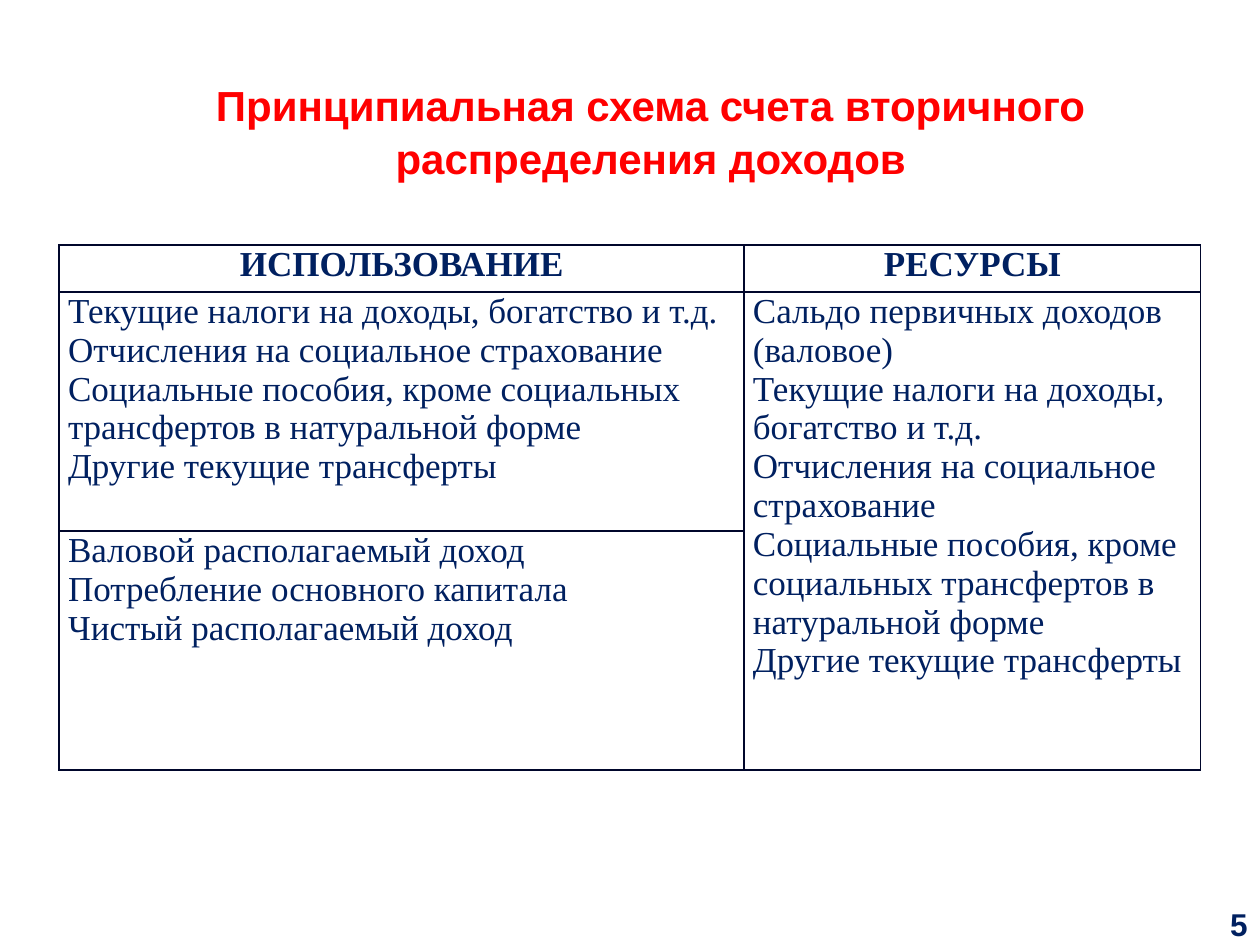
from dataclasses import dataclass

from lxml import etree
from pptx import Presentation
from pptx import util as u
from pptx.dml.color import RGBColor
from pptx.enum import text
from pptx.oxml.ns import qn

ALIGN = text.PP_ALIGN
ANCHOR = text.MSO_ANCHOR


@dataclass(frozen=True)
class Theme:
    navy: str = "002060"
    red: str = "FF0000"
    border: str = "00062B"
    white: str = "FFFFFF"
    sans: str = "Arial"
    serif: str = "Times New Roman"
    title_size: int = 24
    table_size: int = 20
    number_size: int = 18


def write(tf, content, font, size, color, bold=False, align=ALIGN.LEFT, spacing=1.0):
    """Fill a text frame with one paragraph; newlines become line breaks."""
    p = tf.paragraphs[0]
    p.alignment, p.line_spacing = align, spacing
    for i, line in enumerate(content.split("\n")):
        if i:
            p.add_line_break()
        r = p.add_run()
        r.text = line
        r.font.name, r.font.size, r.font.bold = font, u.Pt(size), bold
        r.font.color.rgb = RGBColor.from_string(color)


class Deck:
    def __init__(self, theme, width=10, height=7.5):
        self.theme = theme
        self.prs = Presentation()
        self.prs.slide_width, self.prs.slide_height = u.Inches(width), u.Inches(height)
        self.s = None

    def add_slide(self):
        self.s = self.prs.slides.add_slide(self.prs.slide_layouts[5])
        fill = self.s.background.fill
        fill.solid()
        fill.fore_color.rgb = RGBColor.from_string(self.theme.white)

    def box(self, x, y, w, h):
        """Turn shares of the slide's size into lengths."""
        W, H = self.prs.slide_width, self.prs.slide_height
        return int(x * W), int(y * H), int(w * W), int(h * H)

    def title(self, content, area):
        t, sp = self.theme, self.s.shapes.title
        sp.left, sp.top, sp.width, sp.height = self.box(*area)
        tf = sp.text_frame
        tf.word_wrap, tf.auto_size = True, text.MSO_AUTO_SIZE.NONE
        tf.vertical_anchor = ANCHOR.MIDDLE
        write(tf, content, t.sans, t.title_size, t.red, bold=True,
              align=ALIGN.CENTER, spacing=1.05)

    def page_number(self, number, area):
        t = self.theme
        tf = self.s.shapes.add_textbox(*self.box(*area)).text_frame
        tf.word_wrap, tf.vertical_anchor = True, ANCHOR.BOTTOM
        tf.margin_left = tf.margin_right = u.Inches(0.1)
        write(tf, str(number), t.sans, t.number_size, t.navy, bold=True, align=ALIGN.RIGHT)

    def table(self, rows, area, col_shares, row_shares, merges=()):
        t = self.theme
        x, y, w, h = self.box(*area)
        table = self.s.shapes.add_table(len(rows), len(rows[0]), x, y, w, h).table
        table.first_row = table.horz_banding = False
        for col, share in zip(table.columns, col_shares):
            col.width = int(w * share)
        for row, share in zip(table.rows, row_shares):
            row.height = int(h * share)
        for start, end in merges:
            table.cell(*start).merge(table.cell(*end))
        for i, row in enumerate(rows):
            for j, content in enumerate(row):
                cell = table.cell(i, j)
                cell.margin_left = cell.margin_right = u.Inches(0.07)
                cell.margin_top = cell.margin_bottom = 0
                self.borders(cell)
                cell.fill.background()
                if content:
                    write(cell.text_frame, content, t.serif, t.table_size, t.navy,
                          bold=i == 0, align=ALIGN.LEFT if i else ALIGN.CENTER)

    def borders(self, cell, width=1):
        tc_pr = cell._tc.get_or_add_tcPr()
        for side in ("lnL", "lnR", "lnT", "lnB"):
            ln = etree.SubElement(tc_pr, qn(f"a:{side}"), w=str(u.Pt(width)))
            fill = etree.SubElement(ln, qn("a:solidFill"))
            etree.SubElement(fill, qn("a:srgbClr"), val=self.theme.border)


def main():
    taxes = "Текущие налоги на доходы, богатство и т.д."
    transfers = "\n".join([
        taxes,
        "Отчисления на социальное страхование",
        "Социальные пособия, кроме социальных трансфертов в натуральной форме",
        "Другие текущие трансферты",
    ])
    income = "\n".join([
        "Валовой располагаемый доход",
        "Потребление основного капитала",
        "Чистый располагаемый доход",
    ])
    rows = [
        ["ИСПОЛЬЗОВАНИЕ", "РЕСУРСЫ"],
        [transfers, "Сальдо первичных доходов (валовое)\n" + transfers],
        [income, None],
    ]

    deck = Deck(Theme())
    deck.add_slide()
    deck.page_number(5, (0.949, 0.952, 0.051, 0.052))
    deck.title("Принципиальная схема счета вторичного распределения доходов",
               (0.036, 0.077, 0.961, 0.121))
    deck.table(rows, (0.047, 0.259, 0.906, 0.556), (0.6, 0.4), (0.09, 0.455, 0.455),
               merges=[((1, 1), (2, 1))])
    deck.prs.save("out.pptx")


if __name__ == "__main__":
    main()
